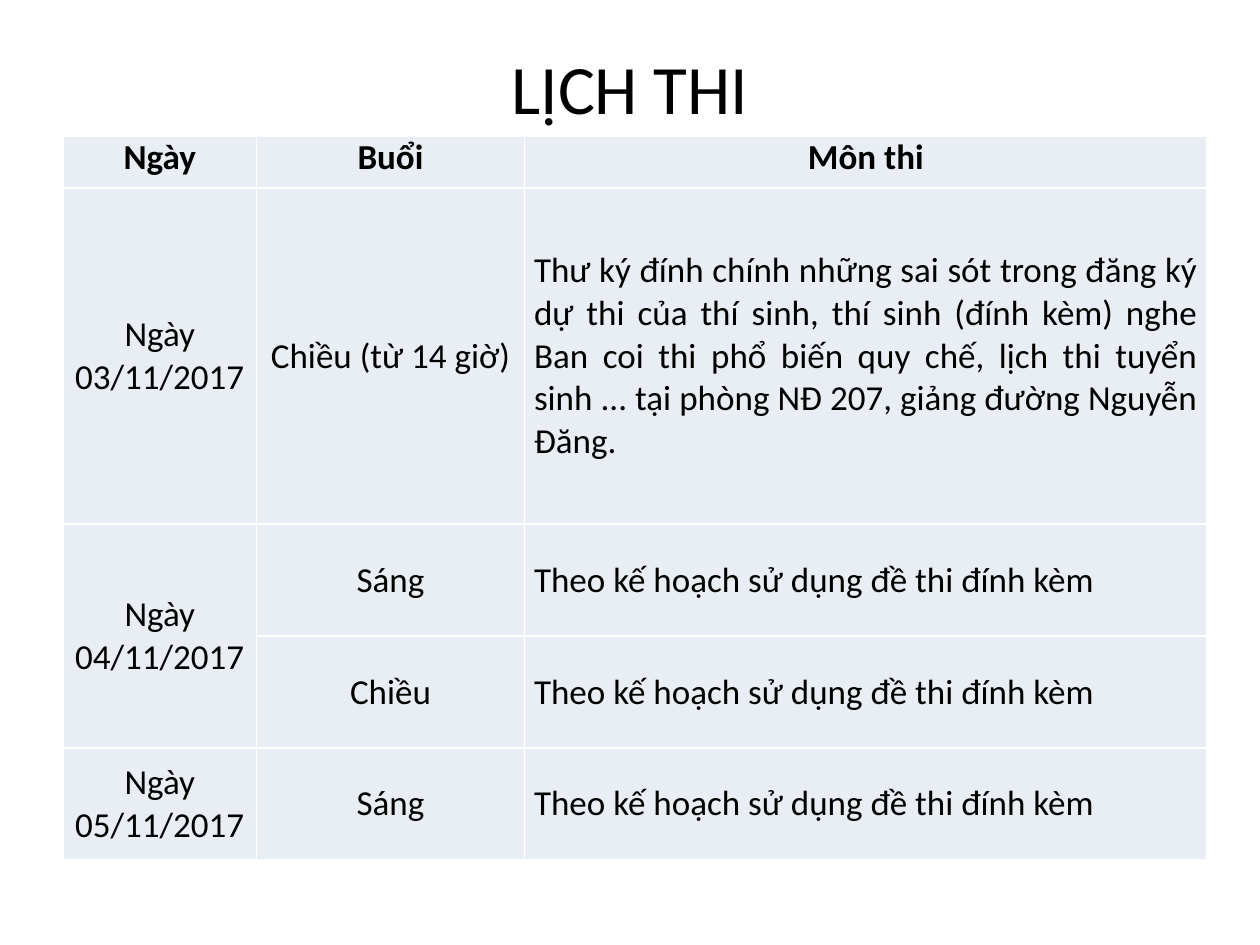
from dataclasses import dataclass

from lxml.etree import SubElement
from pptx import Presentation
from pptx.dml.color import RGBColor
from pptx.enum.text import MSO_ANCHOR as Anchor, PP_ALIGN as Align
from pptx.oxml.ns import qn
from pptx.util import Pt

FONT = "Calibri"
BLACK, WHITE, PALE = "000000", "FFFFFF", "E9EDF4"
WIDTHS = [110.6, 153.2, 390]
HEIGHTS = [29.5, 192, 64, 64, 64]
PLAN = "Theo kế hoạch sử dụng đề thi đính kèm"
BRIEF = (
    "Thư ký đính chính những sai sót trong đăng ký dự thi của thí sinh, "
    "thí sinh (đính kèm) nghe Ban coi thi phổ biến quy chế, lịch thi tuyển "
    "sinh ... tại phòng NĐ 207, giảng đường Nguyễn Đăng."
)


@dataclass
class Exam:
    day: str
    shift: str
    task: str


EXAMS = [
    Exam("Ngày 03/11/2017", "Chiều (từ 14 giờ)", BRIEF),
    Exam("Ngày 04/11/2017", "Sáng", PLAN),
    Exam("", "Chiều", PLAN),  # same day as the row above
    Exam("Ngày 05/11/2017", "Sáng", PLAN),
]


def color(code: str) -> RGBColor:
    return RGBColor.from_string(code)


def write(frame, text: str, size: float, align: Align, bold: bool = False) -> None:
    para = frame.paragraphs[0]
    para.text = text
    para.alignment = align
    for run in para.runs:
        font = run.font
        font.name, font.size, font.bold = FONT, Pt(size), bold
        font.color.rgb = color(BLACK)


def edge(cell, code: str) -> None:
    """Rule all four sides; lines must come before the fill."""
    props = cell._tc.get_or_add_tcPr()
    for side in ("lnL", "lnR", "lnT", "lnB"):
        line = SubElement(props, qn(f"a:{side}"), w=str(Pt(1)))
        fill = SubElement(line, qn("a:solidFill"))
        SubElement(fill, qn("a:srgbClr"), val=code)


def style(cell, text: str, head: bool, align: Align) -> None:
    cell.margin_left = cell.margin_right = Pt(5.4)
    cell.margin_top = cell.margin_bottom = Pt(0)
    cell.vertical_anchor = Anchor.TOP if head else Anchor.MIDDLE
    edge(cell, WHITE)
    cell.fill.solid()
    cell.fill.fore_color.rgb = color(PALE)
    write(cell.text_frame, text, 20, align, head)


def add_title(slide, text: str) -> None:
    frame = slide.shapes.add_textbox(Pt(36), Pt(21.6), Pt(648), Pt(56)).text_frame
    frame.word_wrap = True
    frame.vertical_anchor = Anchor.MIDDLE
    write(frame, text, 39.6, Align.CENTER)


def add_plan(slide, exams: list[Exam]) -> None:
    rows = [Exam("Ngày", "Buổi", "Môn thi"), *exams]
    table = slide.shapes.add_table(
        len(rows), len(WIDTHS), Pt(36), Pt(78), Pt(sum(WIDTHS)), Pt(sum(HEIGHTS))
    ).table
    table.first_row = table.horz_banding = False
    for col, width in zip(table.columns, WIDTHS):
        col.width = Pt(width)
    for row, height in zip(table.rows, HEIGHTS):
        row.height = Pt(height)
    for r, exam in enumerate(rows):
        for c, text in enumerate((exam.day, exam.shift, exam.task)):
            align = Align.JUSTIFY if r and c == 2 else Align.CENTER
            style(table.cell(r, c), text, r == 0, align)
        # A row without a day joins the one above
        if not exam.day:
            table.cell(r - 1, 0).merge(table.cell(r, 0))


def main() -> None:
    deck = Presentation()
    deck.slide_width, deck.slide_height = Pt(720), Pt(540)
    slide = deck.slides.add_slide(deck.slide_layouts[6])
    add_title(slide, "LỊCH THI")
    add_plan(slide, EXAMS)
    deck.save("out.pptx")


if __name__ == "__main__":
    main()
